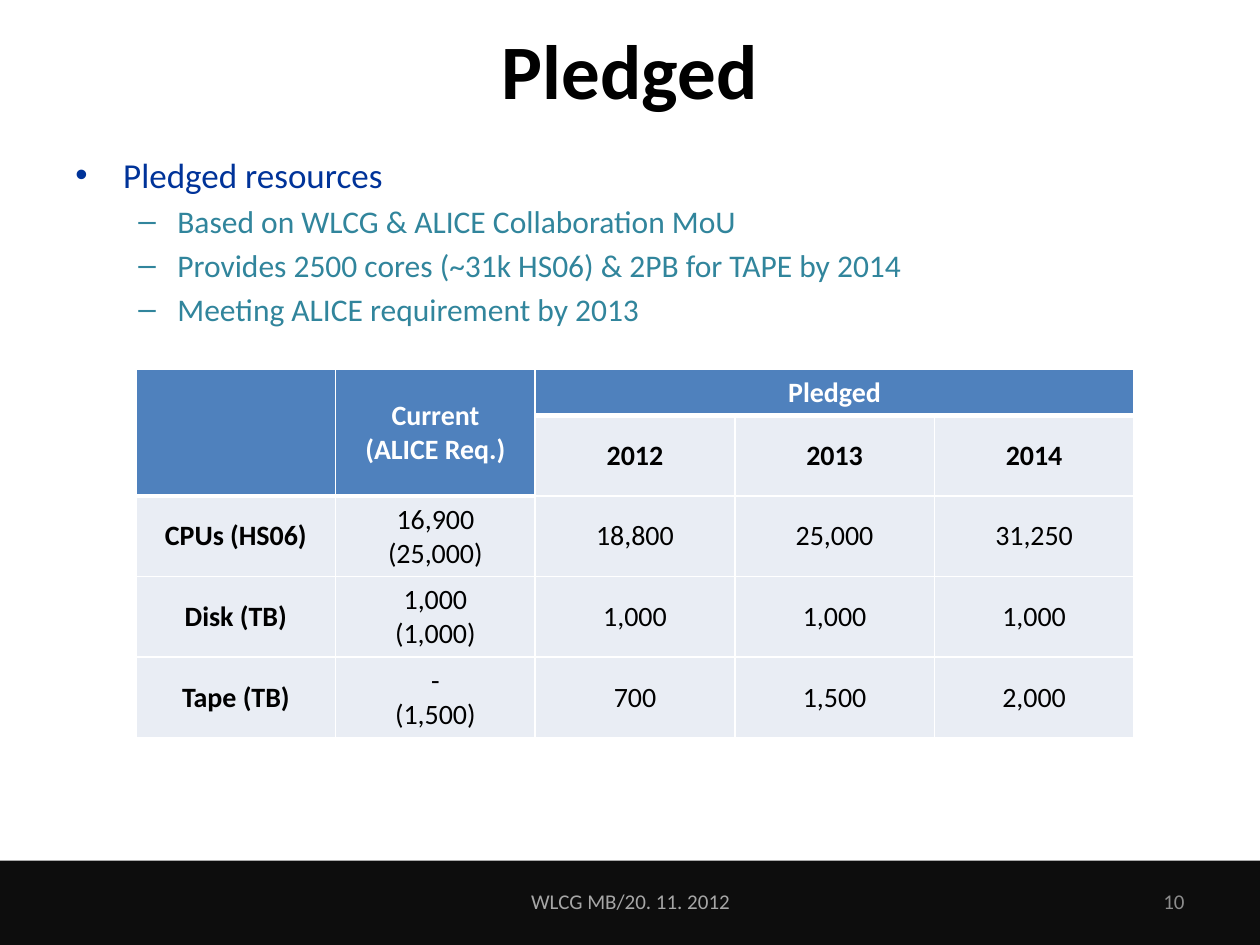
import pptx
import pptx.util
import pptx.dml.color
import pptx.enum.shapes
import pptx.enum.text
import pptx.oxml.ns
from lxml import etree

Inches = pptx.util.Inches
Pt = pptx.util.Pt
ALIGN = pptx.enum.text.PP_ALIGN
ANCHOR = pptx.enum.text.MSO_ANCHOR
qn = pptx.oxml.ns.qn

FONT = "Calibri"
COLORS = {
    "black": "000000", "white": "FFFFFF", "footer_band": "0D0D0D",
    "topic": "003399", "detail": "31859C", "footer": "A6A6A6",
    "number": "8C8C8C", "header": "4F81BD", "body": "E9EDF4",
}
BULLETS = [
    ("Pledged resources", 0),
    ("Based on WLCG & ALICE Collaboration MoU", 1),
    ("Provides 2500 cores (~31k HS06) & 2PB for TAPE by 2014", 1),
    ("Meeting ALICE requirement by 2013", 1),
]
# Per level: character, size, colour, margin and hanging indent in inches
BULLET_STYLES = [
    ("•", 20, "topic", 0.38, -0.38),
    ("–", 18, "detail", 0.81, -0.31),
]
TABLE_ROWS = [
    ["", "Current\n(ALICE Req.)", "Pledged", "", ""],
    ["", "", "2012", "2013", "2014"],
    ["CPUs (HS06)", "16,900\n(25,000)", "18,800", "25,000", "31,250"],
    ["Disk (TB)", "1,000\n(1,000)", "1,000", "1,000", "1,000"],
    ["Tape (TB)", "-\n(1,500)", "700", "1,500", "2,000"],
]
ROW_HEIGHTS = [0.36, 0.64, 0.64, 0.64, 0.64]
MERGES = [((0, 0), (1, 0)), ((0, 1), (1, 1)), ((0, 2), (0, 4))]


def rgb(name):
    return pptx.dml.color.RGBColor.from_string(COLORS[name])


def style(paragraph, size, color, bold=False, align=None):
    paragraph.font.name = FONT
    paragraph.font.size = Pt(size)
    paragraph.font.bold = bold
    paragraph.font.color.rgb = rgb(color)
    paragraph.alignment = align


def add_frame(slide, left, top, width, height, anchor):
    box = slide.shapes.add_textbox(
        Inches(left), Inches(top), Inches(width), Inches(height))
    box.text_frame.word_wrap = True
    box.text_frame.vertical_anchor = anchor
    return box.text_frame


def add_label(slide, text, bounds, size, color, align, bold=False):
    frame = add_frame(slide, *bounds, ANCHOR.MIDDLE)
    frame.text = text
    style(frame.paragraphs[0], size, color, bold, align)


def add_band(slide):
    band = slide.shapes.add_shape(
        pptx.enum.shapes.MSO_SHAPE.RECTANGLE,
        Inches(0), Inches(6.83), Inches(10), Inches(0.67))
    band.shadow.inherit = False
    band.fill.solid()
    band.fill.fore_color.rgb = rgb("footer_band")
    band.line.fill.background()


def add_bullets(slide):
    frame = add_frame(slide, 0.5, 1.17, 9, 1.6, ANCHOR.TOP)
    frame.text = "\n".join(text for text, level in BULLETS)
    for paragraph, (text, level) in zip(frame.paragraphs, BULLETS):
        character, size, color, margin, indent = BULLET_STYLES[level]
        style(paragraph, size, color, align=ALIGN.LEFT)
        paragraph.level = level
        paragraph.space_before = Pt(size * 0.2)
        properties = paragraph._p.get_or_add_pPr()
        properties.set("marL", str(Inches(margin)))
        properties.set("indent", str(Inches(indent)))
        etree.SubElement(properties, qn("a:buFont"), typeface="Arial")
        etree.SubElement(properties, qn("a:buChar"), char=character)


def set_borders(cell, top, bottom):
    properties = cell._tc.get_or_add_tcPr()
    for side, width in (("L", 1), ("R", 1), ("T", top), ("B", bottom)):
        line = etree.SubElement(properties, qn(f"a:ln{side}"), w=str(Pt(width)))
        fill = etree.SubElement(line, qn("a:solidFill"))
        etree.SubElement(fill, qn("a:srgbClr"), val=COLORS["white"])


def add_pledge_table(slide):
    table = slide.shapes.add_table(
        len(TABLE_ROWS), len(TABLE_ROWS[0]), Inches(1.08), Inches(2.93),
        Inches(7.92), Inches(sum(ROW_HEIGHTS))).table
    for row, height in zip(table.rows, ROW_HEIGHTS):
        row.height = Inches(height)
    for first, last in MERGES:
        table.cell(*first).merge(table.cell(*last))

    for row, texts in enumerate(TABLE_ROWS):
        for column, text in enumerate(texts):
            cell = table.cell(row, column)
            # The first two header cells are two rows deep
            header_end = 2 if column < 2 else 1
            is_header = row < header_end
            set_borders(cell, 3 if row == header_end else 1,
                        3 if row + 1 == header_end else 1)
            cell.fill.solid()
            cell.fill.fore_color.rgb = rgb("header" if is_header else "body")
            cell.vertical_anchor = ANCHOR.MIDDLE
            cell.text = text
            for paragraph in cell.text_frame.paragraphs:
                style(paragraph, 16, "white" if is_header else "black",
                      row < 2 or column == 0, ALIGN.CENTER)


def main():
    presentation = pptx.Presentation()
    presentation.slide_width = Inches(10)
    presentation.slide_height = Inches(7.5)
    slide = presentation.slides.add_slide(presentation.slide_layouts[6])

    # Title and bullets
    add_band(slide)
    add_label(slide, "Pledged", (0.5, -0.08, 9, 1.25), 44, "black",
              ALIGN.CENTER, bold=True)
    add_bullets(slide)

    # Footer
    add_label(slide, "WLCG MB/20. 11. 2012", (3.42, 6.95, 3.17, 0.4), 12,
              "footer", ALIGN.CENTER)
    add_label(slide, "10", (7.17, 6.95, 2.33, 0.4), 12, "number", ALIGN.RIGHT)

    # Resources by year
    add_pledge_table(slide)
    presentation.save("out.pptx")


if __name__ == "__main__":
    main()
